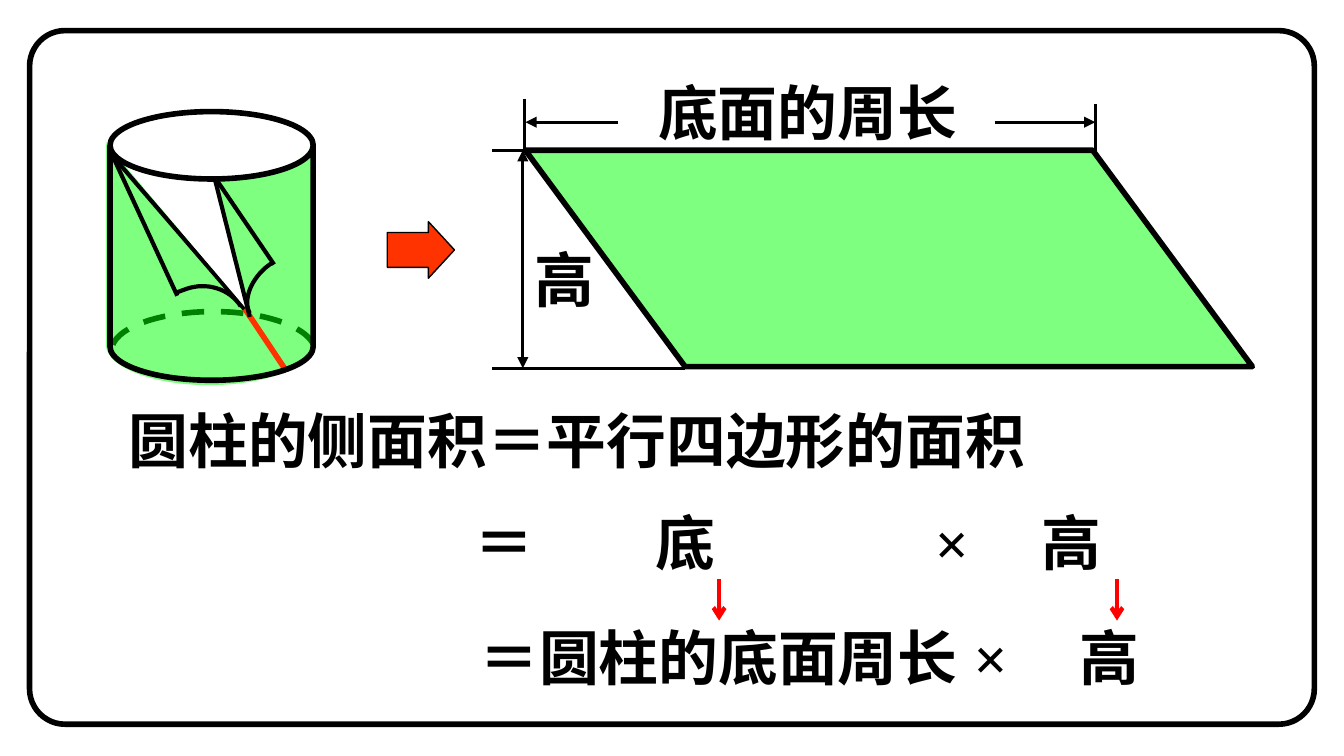
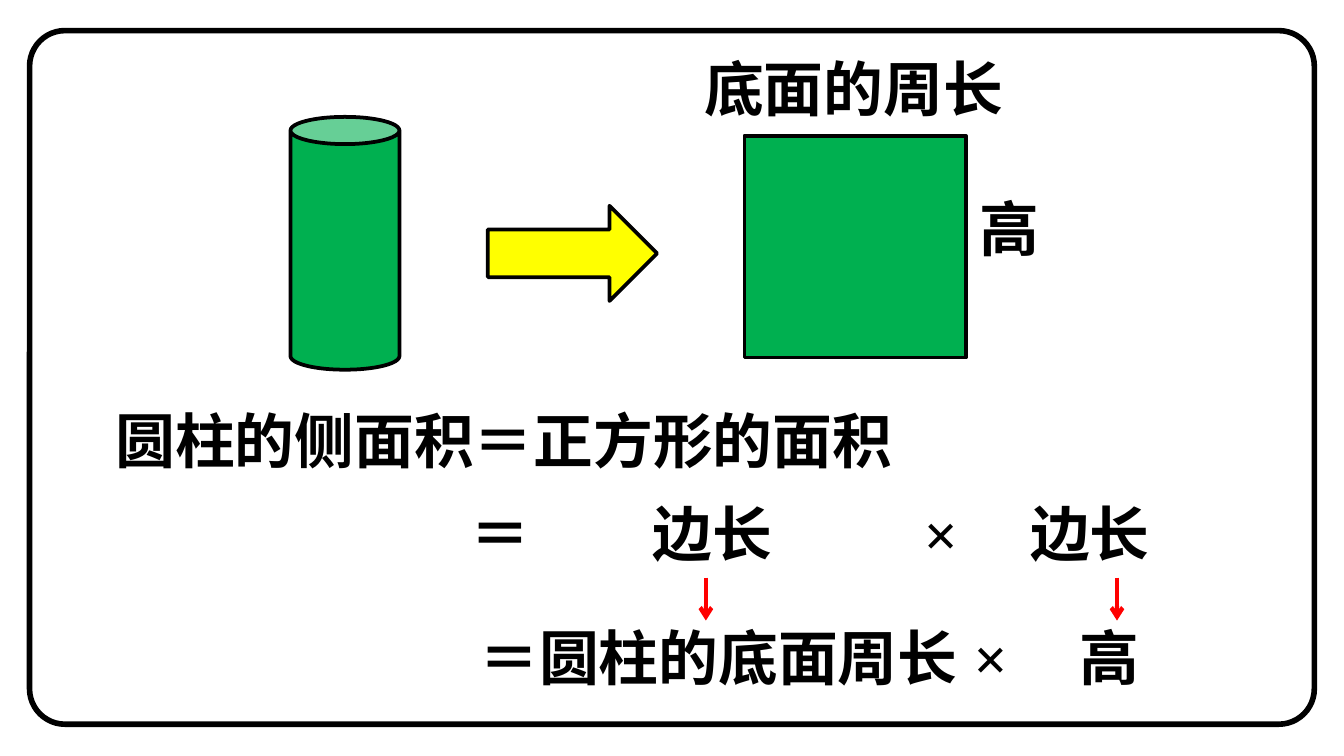
from lxml import etree
from pptx import Presentation
from pptx.dml.color import RGBColor
from pptx.enum.dml import MSO_LINE
from pptx.enum.shapes import MSO_CONNECTOR, MSO_SHAPE
from pptx.enum.text import MSO_ANCHOR, MSO_AUTO_SIZE
from pptx.oxml.ns import qn
from pptx.util import Cm, Pt

BLACK = RGBColor(0x00, 0x00, 0x00)
WHITE = RGBColor(0xFF, 0xFF, 0xFF)
RED = RGBColor(0xFF, 0x00, 0x00)
ORANGE_RED = RGBColor(0xFF, 0x33, 0x00)
LIME = RGBColor(0x00, 0xFF, 0x00)
GREEN = RGBColor(0x00, 0xB0, 0x50)
YELLOW = RGBColor(0xFF, 0xFF, 0x00)

STRAIGHT = MSO_CONNECTOR.STRAIGHT
DASH = MSO_LINE.DASH
TOP, MIDDLE = MSO_ANCHOR.TOP, MSO_ANCHOR.MIDDLE
FIT_SHAPE = MSO_AUTO_SIZE.SHAPE_TO_FIT_TEXT
ROUNDED, RECTANGLE = MSO_SHAPE.ROUNDED_RECTANGLE, MSO_SHAPE.RECTANGLE
CAN, RIGHT_ARROW = MSO_SHAPE.CAN, MSO_SHAPE.RIGHT_ARROW
PARALLELOGRAM, TRIANGLE = MSO_SHAPE.PARALLELOGRAM, MSO_SHAPE.RIGHT_TRIANGLE
STORED_DATA = MSO_SHAPE.FLOWCHART_STORED_DATA

CJK_FONT = "Noto Sans CJK SC"
LATIN_FONT = "Times New Roman"
FONT_FORMAT = {"size": Pt(32), "bold": True}
TEXT_HEIGHT = 1.63
HALF_OPAQUE = 50000
CURVE_STEPS = 16
PERIMETER = "底面的周长"
HEIGHT = "高"


def bezier_points(start, *segments):
    """Points along joined cubic curves; each segment is two controls and an end."""
    points = [start]
    for control_1, control_2, end in segments:
        for step in range(1, CURVE_STEPS + 1):
            t = step / CURVE_STEPS
            weights = ((1 - t) ** 3, 3 * t * (1 - t) ** 2, 3 * t * t * (1 - t), t ** 3)
            corners = (start, control_1, control_2, end)
            points.append(tuple(sum(w * corner[axis] for w, corner in zip(weights, corners))
                                for axis in (0, 1)))
        start = end
    return points


class Lesson:
    def __init__(self):
        self.presentation = Presentation()
        self.presentation.slide_width = Cm(25.4)
        self.presentation.slide_height = Cm(14.29)
        self.slide = None

    def new_slide(self):
        layout = self.presentation.slide_layouts[6]
        self.slide = self.presentation.slides.add_slide(layout)

    def frame_on_master(self):
        """Move a rounded frame behind everything on the slide master."""
        frame = self.shape(ROUNDED, (0.56, 0.58, 24.28, 13.11), WHITE, 3, adjustments=(0.051,))
        frame.element.nvSpPr.cNvPr.set("id", "100")
        tree = self.presentation.slide_master.element.cSld.spTree
        tree.insert(2, frame.element)

    def outline(self, shape, width, color=BLACK):
        if width:
            shape.line.color.rgb = color
            shape.line.width = Pt(width)
        else:
            shape.line.fill.background()

    def shape(self, kind, box, fill=None, line_width=0, adjustments=(), rotation=0,
              flip=None, alpha=None):
        shape = self.slide.shapes.add_shape(kind, *map(Cm, box))
        shape.shadow.inherit = False
        shape.rotation = rotation
        for index, value in enumerate(adjustments):
            shape.adjustments[index] = value
        if fill is None:
            shape.fill.background()
        else:
            shape.fill.solid()
            shape.fill.fore_color.rgb = fill
        if alpha:
            color = shape.element.spPr.find(qn("a:solidFill"))[0]
            etree.SubElement(color, qn("a:alpha"), val=str(alpha))
        if flip:
            shape.element.spPr.xfrm.set(flip, "1")
        self.outline(shape, line_width)
        return shape

    def curve(self, points, width, dash=None):
        emu_points = [(Cm(x), Cm(y)) for x, y in points]
        builder = self.slide.shapes.build_freeform(*emu_points[0])
        builder.add_line_segments(emu_points[1:], close=False)
        shape = builder.convert_to_shape()
        shape.shadow.inherit = False
        shape.fill.background()
        self.outline(shape, width)
        if dash:
            shape.line.dash_style = dash

    def line(self, start, end, width=1.5, color=BLACK, head=None, tail=None):
        connector = self.slide.shapes.add_connector(STRAIGHT, *map(Cm, start + end))
        self.outline(connector, width, color)
        properties = connector.element.spPr
        for tag, arrow in (("a:headEnd", head), ("a:tailEnd", tail)):
            if arrow:
                etree.SubElement(properties.find(qn("a:ln")), qn(tag), type=arrow)
        etree.SubElement(properties, qn("a:effectLst"))

    def text(self, text, box, font=LATIN_FONT, wrap=True, anchor=TOP, tabs=()):
        shape = self.slide.shapes.add_textbox(*map(Cm, box))
        frame = shape.text_frame
        for name, value in {"word_wrap": wrap, "auto_size": FIT_SHAPE,
                            "vertical_anchor": anchor}.items():
            setattr(frame, name, value)
        paragraph = frame.paragraphs[0]
        if tabs:
            tab_list = etree.SubElement(paragraph._p.get_or_add_pPr(), qn("a:tabLst"))
            for position in tabs:
                etree.SubElement(tab_list, qn("a:tab"), pos=str(Cm(position)), algn="l")
        run = paragraph.add_run()
        run.text = text
        for name, value in {**FONT_FORMAT, "name": font}.items():
            setattr(run.font, name, value)
        run.font.color.rgb = BLACK
        latin = run.font._element.find(qn("a:latin"))
        latin.addnext(etree.Element(qn("a:ea"), typeface=CJK_FONT))

    def label(self, text, left, top):
        width = 1.65 if text == HEIGHT else 6.22
        self.text(text, (left, top, width, TEXT_HEIGHT), CJK_FONT, wrap=False)

    def derivation(self, area, area_box, factors, factors_box, tabs, arrow_x, arrow_top):
        """Three equation rows, with red arrows from the factors to the last row."""
        self.text("圆柱的侧面积＝" + area, area_box, anchor=MIDDLE)
        first, second = factors
        self.text(f"\t＝\t{first}\t×\t{second}", factors_box, anchor=MIDDLE, tabs=tabs)
        self.text("\t＝圆柱的底面周长\t×\t高", (7.82, 11.61, 14.22, TEXT_HEIGHT),
                  tabs=(0.99, 10.33, 12.33))
        for x in (arrow_x, 21.11):
            self.line((x, arrow_top), (x, 11.73), 2.25, RED, tail="arrow")

    def peeled_cylinder(self):
        base_arc = bezier_points((5.92, 6.5), ((5.74, 6.15), (4.95, 5.89), (4.04, 5.89)),
                                 ((2.97, 5.89), (2.11, 6.22), (2.11, 6.63)))
        self.curve(base_arc, 3, DASH)
        self.shape(STORED_DATA, (1.63, 3.0, 4.65, 3.91), LIME, rotation=270, alpha=HALF_OPAQUE)
        self.line((2.87, 3.2), (5.41, 7.01), 3, ORANGE_RED)
        left_flap = bezier_points((3.33, 5.54), ((3.38, 5.51), (3.45, 5.49), (3.53, 5.46)),
                                  ((3.91, 5.33), (4.34, 5.46), (4.55, 5.79)))
        right_flap = bezier_points((5.16, 4.95), ((5.11, 5.0), (5.05, 5.03), (5.0, 5.08)),
                                   ((4.72, 5.33), (4.6, 5.69), (4.72, 5.92)))
        self.line((4.62, 5.84), (2.13, 2.95), 2.25)
        self.line((2.13, 2.95), (3.35, 5.59), 2.25)
        self.curve(left_flap, 2.25)
        self.shape(TRIANGLE, (1.83, 3.71, 3.38, 1.57), WHITE, rotation=74.6, flip="flipV")
        self.line((4.72, 5.99), (4.06, 3.38), 2.25)
        self.line((4.06, 3.35), (5.18, 5.0), 2.25)
        self.curve(right_flap, 2.25)
        self.shape(CAN, (2.08, 2.11, 3.84, 5.08), None, 3, (0.332,))

    def measured_parallelogram(self):
        self.shape(PARALLELOGRAM, (9.93, 2.84, 13.74, 4.09), LIME, 3, (0.738,),
                   flip="flipH", alpha=HALF_OPAQUE)
        self.label(PERIMETER, 12.19, 1.3)
        self.line((11.68, 2.31), (9.93, 2.31), tail="triangle")
        self.line((18.8, 2.31), (20.7, 2.31), tail="triangle")
        for start, end in (((9.91, 2.84), (9.91, 1.88)), ((20.7, 2.92), (20.7, 1.96)),
                           ((9.3, 2.84), (10.26, 2.84)), ((9.3, 6.96), (12.95, 6.96))):
            self.line(start, end)
        self.line((9.88, 2.84), (9.88, 6.96), head="triangle", tail="triangle")
        self.label(HEIGHT, 9.86, 4.47)


def main():
    lesson = Lesson()
    lesson.new_slide()
    lesson.frame_on_master()
    lesson.peeled_cylinder()
    lesson.shape(RIGHT_ARROW, (7.32, 4.19, 1.27, 1.07), ORANGE_RED, 0.75, (0.615, 0.46))
    lesson.measured_parallelogram()
    lesson.derivation("平行四边形的面积", (2.18, 7.49, 17.63, TEXT_HEIGHT),
                      ("底", HEIGHT), (6.43, 9.42, 17.12, TEXT_HEIGHT),
                      (2.28, 5.71, 10.99, 13.01), 13.59, 10.95)

    lesson.new_slide()
    lesson.derivation("正方形的面积", (1.93, 7.49, 16.64, TEXT_HEIGHT),
                      ("边长", "边长"), (6.38, 9.25, 17.12, TEXT_HEIGHT),
                      (2.27, 5.71, 10.83, 12.84), 13.34, 10.92)
    lesson.shape(RIGHT_ARROW, (9.22, 3.89, 3.2, 1.8), YELLOW, 2)
    lesson.shape(RECTANGLE, (14.07, 2.57, 4.19, 4.19), GREEN, 2)
    lesson.shape(CAN, (5.49, 2.21, 2.06, 4.78), GREEN, 2)
    lesson.label(PERIMETER, 13.06, 0.86)
    lesson.label(HEIGHT, 18.26, 3.51)
    lesson.presentation.save("out.pptx")


if __name__ == "__main__":
    main()
